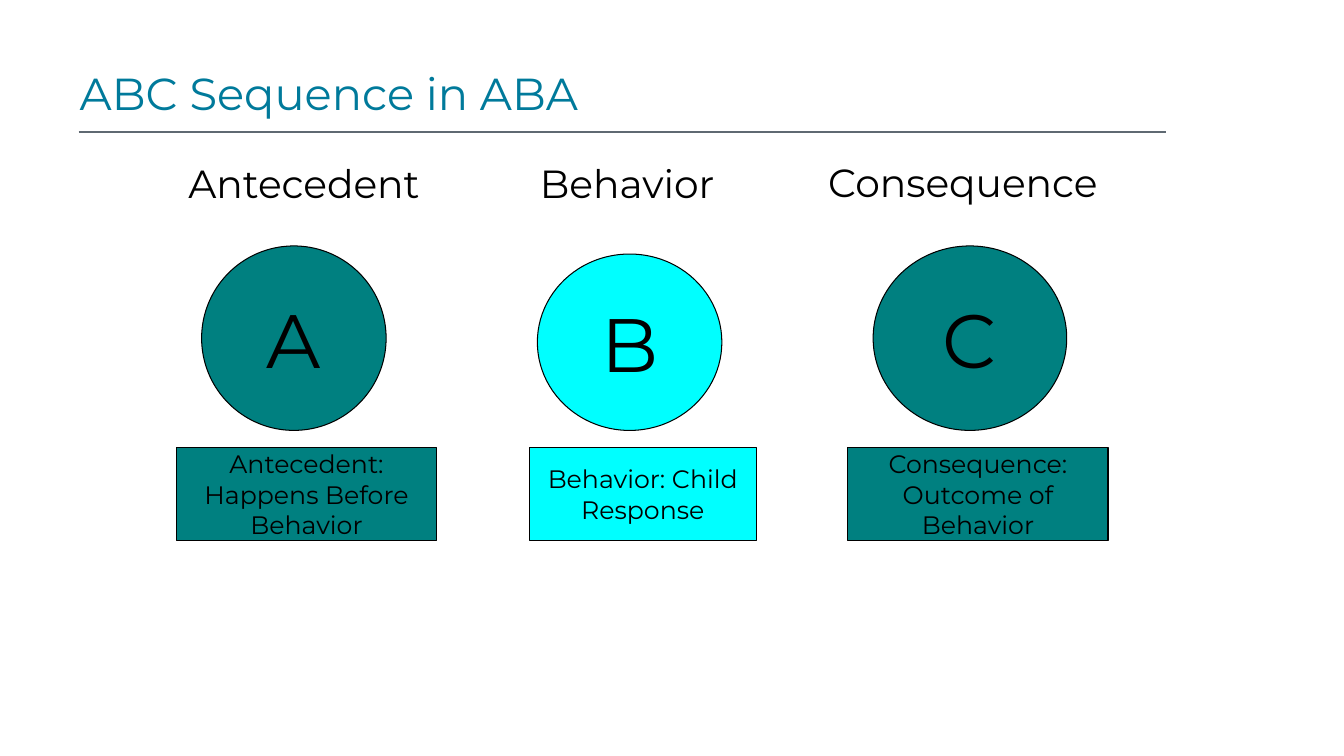
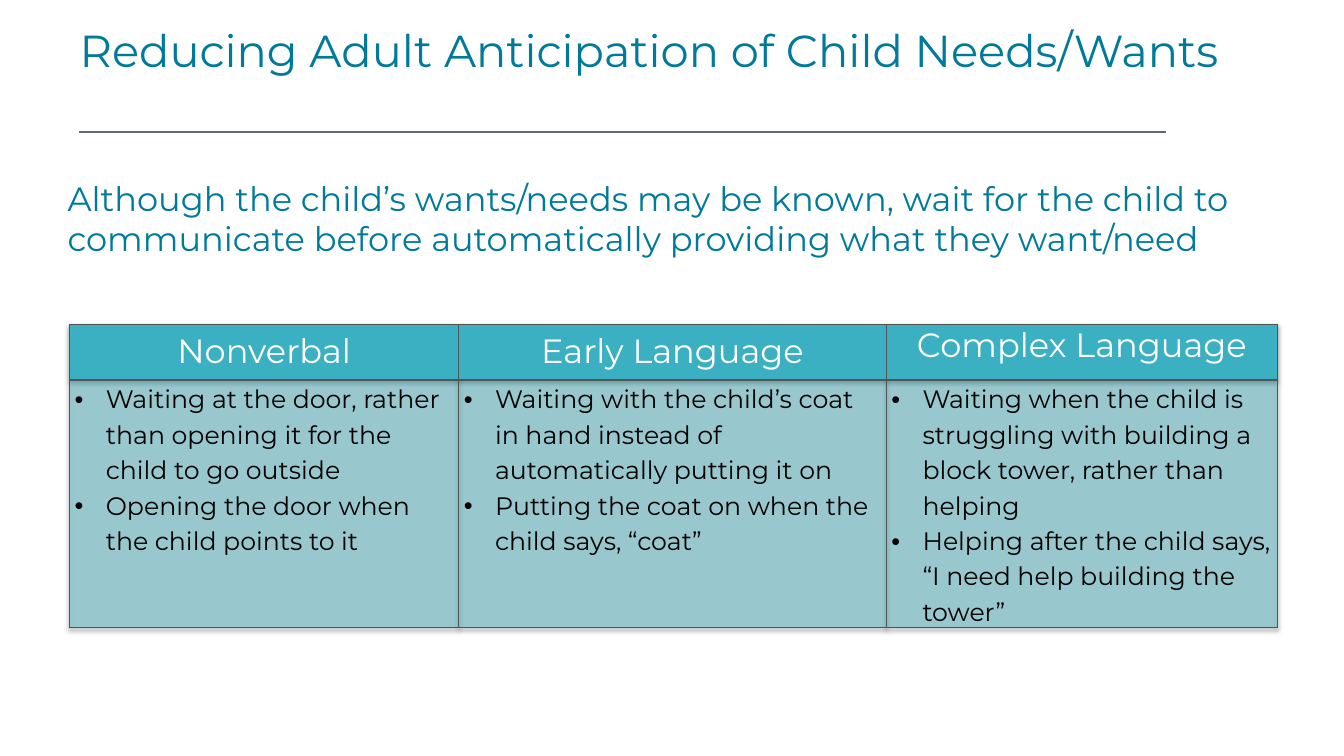
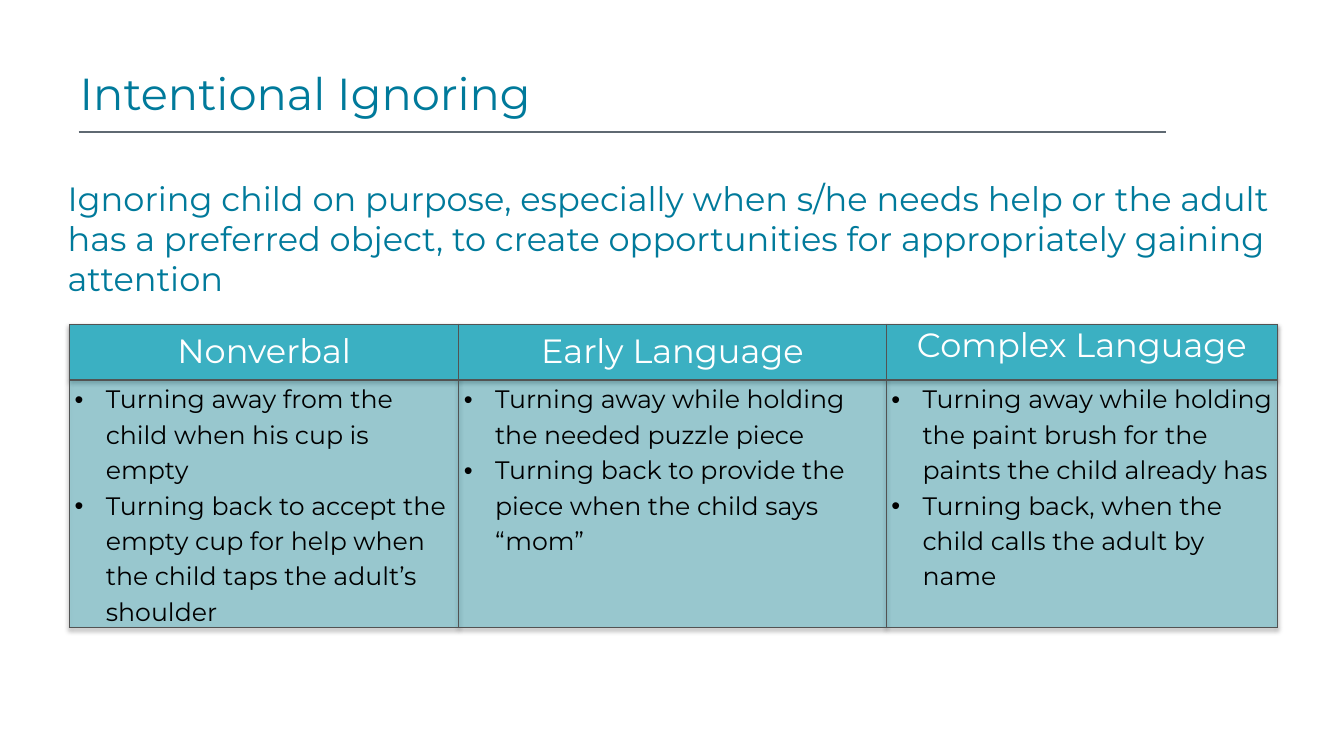
import pptx
import pptx.util
import pptx.dml.color
import pptx.enum.shapes
import pptx.enum.text
import pptx.oxml
import pptx.oxml.ns
from pptx.util import Inches

COLORS = {
    "title": "007A9B",
    "rule": "5F6972",
    "teal": "008080",
    "cyan": "00FFFF",
    "header": "3BB0C2",
    "border": "525353",
    "black": "000000",
    "white": "FFFFFF",
}
SHAPES = pptx.enum.shapes.MSO_SHAPE
ALIGN = pptx.enum.text.PP_ALIGN
ANCHOR = pptx.enum.text.MSO_ANCHOR
NAMESPACE = pptx.oxml.ns.nsdecls("a")


def rgb(name):
    return pptx.dml.color.RGBColor.from_string(COLORS[name])


class Deck:
    font = "Montserrat"
    table_columns = (3.86, 4.24, 3.88)
    table_rows = (0.55, 2.4)
    table_headings = ("Nonverbal", "Early Language", "Complex Language")

    def __init__(self):
        self.presentation = pptx.Presentation()
        self.presentation.slide_width = Inches(13.33)
        self.presentation.slide_height = Inches(7.5)
        self.slide = None

    def add_slide(self, title, top=0.55):
        self.slide = self.presentation.slides.add_slide(self.presentation.slide_layouts[5])
        shape = self.slide.shapes.title
        shape.left, shape.top = Inches(0.69), Inches(top)
        shape.width, shape.height = Inches(11.53), Inches(1.22 - top)
        self.fill_frame(shape.text_frame, [title], 32, "title", spacing=pptx.util.Pt(40),
                        insets=(0.1, 0.08, 0.1, 0.05))
        self.rule()

    def rule(self):
        line = self.slide.shapes.add_connector(
            pptx.enum.shapes.MSO_CONNECTOR.STRAIGHT,
            Inches(0.78), Inches(1.31), Inches(11.56), Inches(1.31))
        line.line.color.rgb = rgb("rule")
        line.line.width = pptx.util.Pt(1.5)
        line._element.spPr.append(pptx.oxml.parse_xml(f"<a:effectLst {NAMESPACE}/>"))

    def fill_frame(self, frame, lines, size, color, align=ALIGN.LEFT, anchor=ANCHOR.TOP,
                   spacing=None, insets=None, wrap=True):
        frame.text = "\n".join(lines)
        frame.word_wrap = wrap
        frame.auto_size = pptx.enum.text.MSO_AUTO_SIZE.NONE
        frame.vertical_anchor = anchor
        if insets:
            (frame.margin_left, frame.margin_top,
             frame.margin_right, frame.margin_bottom) = map(Inches, insets)
        for paragraph in frame.paragraphs:
            self.style_paragraph(paragraph, size, color, align, spacing)

    def style_paragraph(self, paragraph, size, color, align=ALIGN.LEFT, spacing=None):
        paragraph.alignment = align
        if spacing:
            paragraph.line_spacing = spacing
        for run in paragraph.runs:
            run.font.name = self.font
            run.font.size = pptx.util.Pt(size)
            run.font.bold = False
            run.font.color.rgb = rgb(color)

    def text(self, left, top, width, height, lines, size, color, **style):
        box = self.slide.shapes.add_textbox(
            Inches(left), Inches(top), Inches(width), Inches(height))
        self.fill_frame(box.text_frame, lines, size, color, **style)

    def label(self, left, top, width, text):
        self.text(left, top, width, 0.57, [text], 28, "black",
                  align=ALIGN.CENTER, wrap=False)

    def filled_shape(self, kind, left, top, width, height, fill, lines, size):
        shape = self.slide.shapes.add_shape(
            kind, Inches(left), Inches(top), Inches(width), Inches(height))
        shape.shadow.inherit = False
        shape.fill.solid()
        shape.fill.fore_color.rgb = rgb(fill)
        shape.line.color.rgb = rgb("black")
        shape.line.width = pptx.util.Pt(0.75)
        self.fill_frame(shape.text_frame, lines, size, "black", align=ALIGN.CENTER,
                        anchor=ANCHOR.MIDDLE, wrap=False)

    def definition(self, text):
        self.text(0.67, 1.75, 12, 1.47, [text], 24, "title",
                  spacing=pptx.util.Pt(28.6), insets=(0, 0.02, 0, 0))

    def examples_table(self, examples):
        frame = self.slide.shapes.add_table(
            2, 3, Inches(0.69), Inches(3.22),
            Inches(sum(self.table_columns)), Inches(sum(self.table_rows)))
        table = frame.table
        table.first_row = table.horz_banding = False
        table._tbl.tblPr.insert(0, pptx.oxml.parse_xml(
            f'<a:effectLst {NAMESPACE}><a:outerShdw blurRad="40000" dist="23000" '
            'dir="5400000" rotWithShape="0"><a:srgbClr val="000000">'
            '<a:alpha val="38000"/></a:srgbClr></a:outerShdw></a:effectLst>'))
        for row, height in zip(table.rows, self.table_rows):
            row.height = Inches(height)
        for index, width in enumerate(self.table_columns):
            table.columns[index].width = Inches(width)
            heading, body = table.cell(0, index), table.cell(1, index)
            self.style_cell(heading, [self.table_headings[index]])
            self.style_cell(body, examples[index], alpha=40)
            self.style_paragraph(heading.text_frame.paragraphs[0], 24, "white",
                                 ALIGN.CENTER, 1.15 if index < 2 else None)
            for paragraph in body.text_frame.paragraphs:
                self.bullet(paragraph)
                self.style_paragraph(paragraph, 18, "black", spacing=1.15)

    def style_cell(self, cell, lines, alpha=None):
        cell.text_frame.text = "\n".join(lines)
        cell.margin_left = cell.margin_right = Inches(0.05)
        cell.margin_top = cell.margin_bottom = 0
        cell.fill.solid()
        cell.fill.fore_color.rgb = rgb("header")
        properties = cell._tc.get_or_add_tcPr()
        if alpha:
            color = properties.find(".//" + pptx.oxml.ns.qn("a:srgbClr"))
            color.append(pptx.oxml.parse_xml(f'<a:alpha {NAMESPACE} val="{alpha * 1000}"/>'))
        for position, side in enumerate(("lnL", "lnR", "lnT", "lnB")):
            properties.insert(position, pptx.oxml.parse_xml(
                f'<a:{side} {NAMESPACE} w="12700"><a:solidFill>'
                f'<a:srgbClr val="{COLORS["border"]}"/></a:solidFill></a:{side}>'))

    def bullet(self, paragraph):
        properties = paragraph._p.get_or_add_pPr()
        indent = Inches(0.31)
        properties.set("marL", str(indent))
        properties.set("indent", str(-indent))
        properties.append(pptx.oxml.parse_xml(f'<a:buFont {NAMESPACE} typeface="Arial"/>'))
        properties.append(pptx.oxml.parse_xml(f'<a:buChar {NAMESPACE} char="•"/>'))


def main():
    deck = Deck()

    deck.add_slide("ABC Sequence in ABA")
    circles = (
        ("A", 2, 2.44, 1.83, 1.83, "teal"),
        ("B", 5.33, 2.52, 1.83, 1.75, "cyan"),
        ("C", 8.66, 2.44, 1.92, 1.83, "teal"),
    )
    for letter, left, top, width, height, fill in circles:
        deck.filled_shape(SHAPES.OVAL, left, top, width, height, fill, [letter], 54)
    captions = (
        (1.75, 2.58, "teal", ["Antecedent:", "Happens Before", "Behavior"]),
        (5.25, 2.25, "cyan", ["Behavior: Child", "Response"]),
        (8.41, 2.58, "teal", ["Consequence:", "Outcome of", "Behavior"]),
    )
    for left, width, fill, lines in captions:
        deck.filled_shape(SHAPES.RECTANGLE, left, 4.44, width, 0.92, fill, lines, 18)
    deck.label(1.75, 1.53, 2.53, "Antecedent")
    deck.label(5.23, 1.53, 1.98, "Behavior")
    deck.label(8.11, 1.52, 2.88, "Consequence")

    deck.add_slide("Reducing Adult Anticipation of Child Needs/Wants", top=0.12)
    deck.definition("Although the child’s wants/needs may be known, wait for the child to "
                    "communicate before automatically providing what they want/need")
    deck.examples_table((
        ["Waiting at the door, rather than opening it for the child to go outside",
         "Opening the door when the child points to it"],
        ["Waiting with the child’s coat in hand instead of automatically putting it on",
         "Putting the coat on when the child says, “coat”"],
        ["Waiting when the child is struggling with building a block tower, "
         "rather than helping",
         "Helping after the child says, “I need help building the tower”"],
    ))

    deck.add_slide("Intentional Ignoring")
    deck.definition("Ignoring child on purpose, especially when s/he needs help or the adult "
                    "has a preferred object, to create opportunities for appropriately "
                    "gaining attention")
    deck.examples_table((
        ["Turning away from the child when his cup is empty",
         "Turning back to accept the empty cup for help when the child taps "
         "the adult’s shoulder"],
        ["Turning away while holding the needed puzzle piece",
         "Turning back to provide the piece when the child says “mom”"],
        ["Turning away while holding the paint brush for the paints "
         "the child already has",
         "Turning back, when the child calls the adult by name"],
    ))

    deck.presentation.save("out.pptx")


if __name__ == "__main__":
    main()
